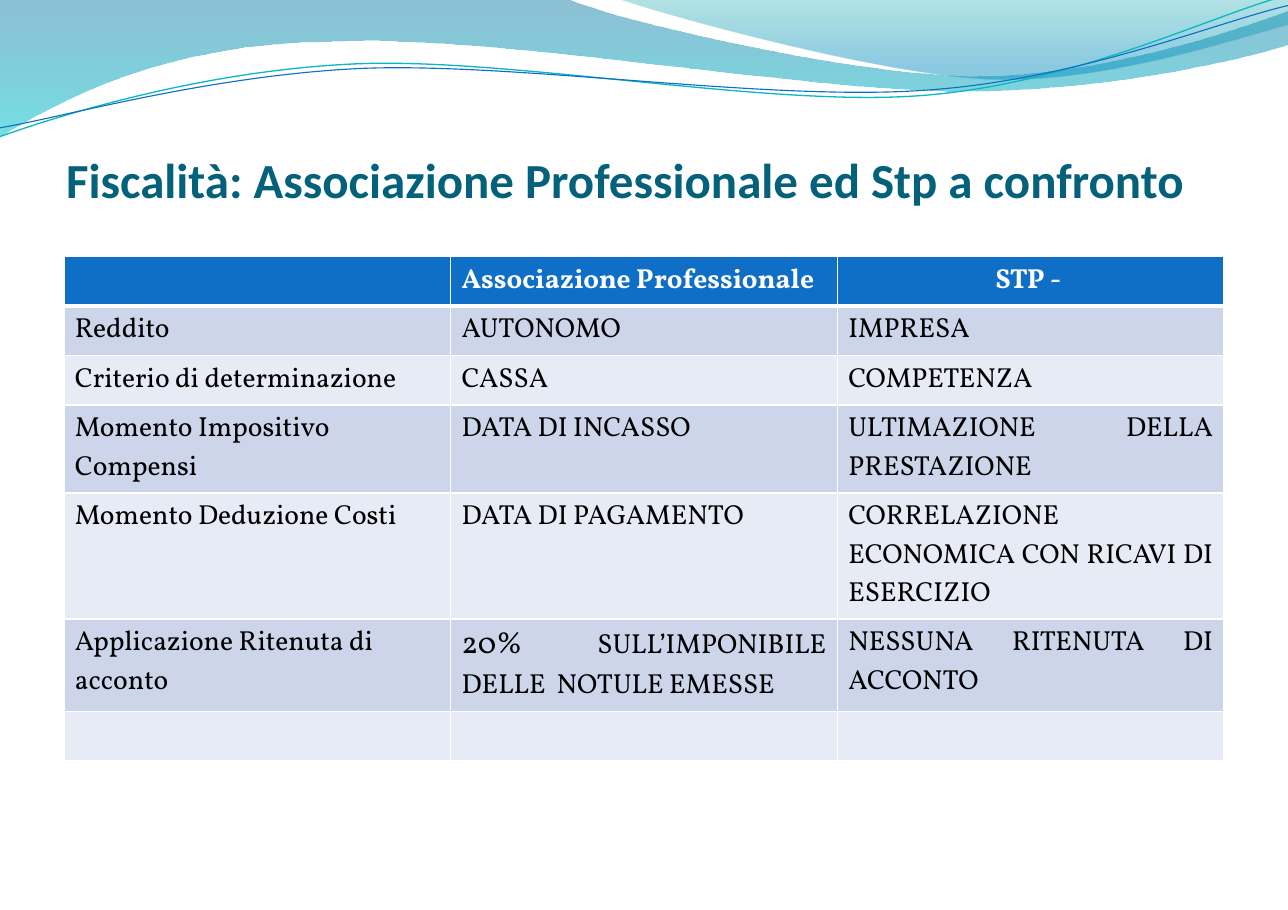
from lxml import etree
from pptx import Presentation
from pptx.dml.color import RGBColor
from pptx.enum.text import MSO_ANCHOR, MSO_AUTO_SIZE, PP_ALIGN
from pptx.oxml.ns import qn
from pptx.util import Emu, Pt

PX = 9144  # 100 px to the inch
LEFT, CENTER, JUSTIFY = PP_ALIGN.LEFT, PP_ALIGN.CENTER, PP_ALIGN.JUSTIFY
BOTTOM = MSO_ANCHOR.BOTTOM
NO_AUTOFIT = MSO_AUTO_SIZE.NONE

WHITE = RGBColor(0xFF, 0xFF, 0xFF)
BLACK = RGBColor(0x00, 0x00, 0x00)
TITLE_TEAL = RGBColor(0x04, 0x61, 0x7B)
BLUE = RGBColor(0x0F, 0x6F, 0xC6)
AQUA = RGBColor(0x0A, 0xB8, 0xBF)
BAND_DARK = RGBColor(0xCC, 0xD5, 0xEA)
BAND_LIGHT = RGBColor(0xE7, 0xEB, 0xF5)
WAVE_TOP = RGBColor(0x00, 0x74, 0xA1)
WAVE_BOTTOM = RGBColor(0x00, 0xC6, 0xCF)
CREST_TOP = RGBColor(0x00, 0xA1, 0xA9)
CREST_BOTTOM = RGBColor(0x00, 0x8B, 0xBF)

COLUMN_WIDTH = 351
ROW_HEIGHT = 41

# Outlines: a pair is a straight segment, six numbers are a Bezier curve
WAVE = [(0, 0), (515, -1), (556, 18, 776, 69, 887, 69),
        (998, 69, 1121, 28, 1169, 10), (1171, 40),
        (1150, 48, 1017, 83, 872, 83), (727, 83, 446, 31, 301, 38),
        (151, 39, 54, 91, -1, 125)]
CREST = [(560, -1), (596, 12, 797, 68, 899, 72),
         (1001, 76, 1124, 35, 1169, 23), (1169, 0)]
AQUA_LINE = [(0, 124), (56, 104, 185, 64, 323, 58),
             (462, 52, 693, 97, 833, 87), (974, 77, 1097, 15, 1167, -4)]
BLUE_LINE = [(0, 116), (55, 107, 191, 68, 331, 62),
             (471, 57, 698, 92, 838, 82), (978, 73, 1101, 21, 1169, 5)]

HEADER = ["", "Associazione Professionale", "STP - "]
ROWS = [
    ["Reddito", "AUTONOMO", "IMPRESA"],
    ["Criterio di determinazione", "CASSA", "COMPETENZA"],
    ["Momento Impositivo Compensi", "DATA DI INCASSO",
     "ULTIMAZIONE DELLA PRESTAZIONE"],
    ["Momento Deduzione Costi", "DATA DI PAGAMENTO",
     "CORRELAZIONE ECONOMICA CON RICAVI DI ESERCIZIO"],
    ["Applicazione Ritenuta di acconto",
     [("20% ", 20), (" SULL’IMPONIBILE DELLE  NOTULE EMESSE", 18)],
     "NESSUNA RITENUTA DI ACCONTO "],
    ["", "", ""],
]


def px(length):
    return Emu(length * PX)


def write_text(frame, text, *, size, font, color, bold=False, align=LEFT):
    """Write a string, or a list of (string, size) runs, as one paragraph."""
    paragraph = frame.paragraphs[0]
    paragraph.alignment = align
    if not text:
        # An empty cell keeps the height of its font
        end = etree.SubElement(paragraph._p, qn("a:endParaRPr"), sz=str(size * 100))
        etree.SubElement(end, qn("a:latin"), typeface=font)
        return
    runs = [(text, size)] if isinstance(text, str) else text
    for run_text, run_size in runs:
        run = paragraph.add_run()
        run.text = run_text
        run.font.name = font
        run.font.size = Pt(run_size)
        run.font.bold = bold
        run.font.color.rgb = color


def add_outline(slide, outline, closed):
    """Build a freeform, then join the points of each curve into a Bezier."""
    points = [(px(x), px(y)) for segment in outline
              for x, y in zip(segment[::2], segment[1::2])]
    builder = slide.shapes.build_freeform(*points[0], scale=1.0)
    builder.add_line_segments(points[1:], close=closed)
    shape = builder.convert_to_shape()
    shape.shadow.inherit = False

    line_steps = iter(shape._element.spPr.findall(".//" + qn("a:lnTo")))
    for segment in outline[1:]:
        first = next(line_steps)
        if len(segment) == 6:
            curve = etree.Element(qn("a:cubicBezTo"))
            first.addprevious(curve)
            for step in (first, next(line_steps), next(line_steps)):
                curve.append(step[0])
                step.getparent().remove(step)
    return shape


def add_gradient_wave(slide, outline, stops):
    """Each stop is (position, colour, opacity in percent)."""
    shape = add_outline(slide, outline, closed=True)
    shape.line.fill.background()
    shape.fill.gradient()
    shape.fill.gradient_angle = 270
    for stop, (position, color, _) in zip(shape.fill.gradient_stops, stops):
        stop.position = position
        stop.color.rgb = color
    colors = shape._element.spPr.findall(".//" + qn("a:gs") + "/" + qn("a:srgbClr"))
    for element, (_, _, opacity) in zip(colors, stops):
        etree.SubElement(element, qn("a:alpha"), val=str(opacity * 1000))


def add_wave_line(slide, outline, color, width):
    shape = add_outline(slide, outline, closed=False)
    shape.fill.background()
    shape.line.color.rgb = color
    shape.line.width = Pt(width)


def set_borders(cell, top, bottom):
    properties = cell._tc.get_or_add_tcPr()
    for side, width in (("L", 1), ("R", 1), ("T", top), ("B", bottom)):
        line = etree.SubElement(properties, qn(f"a:ln{side}"), w=str(Pt(width)))
        fill = etree.SubElement(line, qn("a:solidFill"))
        etree.SubElement(fill, qn("a:srgbClr"), val=str(WHITE))


def add_comparison_table(slide, left, top):
    rows = [HEADER] + ROWS
    columns = len(HEADER)
    table = slide.shapes.add_table(
        len(rows), columns, px(left), px(top),
        px(COLUMN_WIDTH * columns), px(ROW_HEIGHT * len(rows))).table
    for row_index, row in enumerate(rows):
        header = row_index == 0
        band = BAND_DARK if row_index % 2 else BAND_LIGHT
        for column_index, text in enumerate(row):
            cell = table.cell(row_index, column_index)
            set_borders(cell, top=3 if row_index == 1 else 1,
                        bottom=3 if header else 1)
            cell.fill.solid()
            cell.fill.fore_color.rgb = BLUE if header else band
            if header:
                align = CENTER if column_index == 2 else LEFT
            else:
                align = JUSTIFY if column_index else LEFT
            write_text(cell.text_frame, text, size=18, font="Vollkorn",
                       color=WHITE if header else BLACK, bold=header,
                       align=align)


def set_title(slide, text):
    title = slide.shapes.title
    title.left, title.top, title.width, title.height = map(px, (60, 113, 1053, 76))
    frame = title.text_frame
    frame.auto_size = NO_AUTOFIT
    frame.word_wrap = True
    frame.vertical_anchor = BOTTOM
    frame.margin_left = frame.margin_right = frame.margin_bottom = 0
    frame.margin_top = px(6)
    write_text(frame, text, size=32, font="Calibri", color=TITLE_TEAL, bold=True)


def main():
    presentation = Presentation()
    presentation.slide_width = px(1169)
    presentation.slide_height = px(826)
    slide = presentation.slides.add_slide(presentation.slide_layouts[5])

    # Wave decoration along the top
    add_gradient_wave(slide, WAVE, [(0, WAVE_TOP, 45), (1, WAVE_BOTTOM, 55)])
    add_gradient_wave(slide, CREST, [(0, CREST_TOP, 30), (0.8, CREST_BOTTOM, 45)])
    add_wave_line(slide, AQUA_LINE, AQUA, 0.85)
    add_wave_line(slide, BLUE_LINE, BLUE, 0.75)

    # Title and comparison
    set_title(slide, "Fiscalità: Associazione Professionale ed Stp a confronto")
    add_comparison_table(slide, left=58, top=233)

    presentation.save("out.pptx")


if __name__ == "__main__":
    main()
